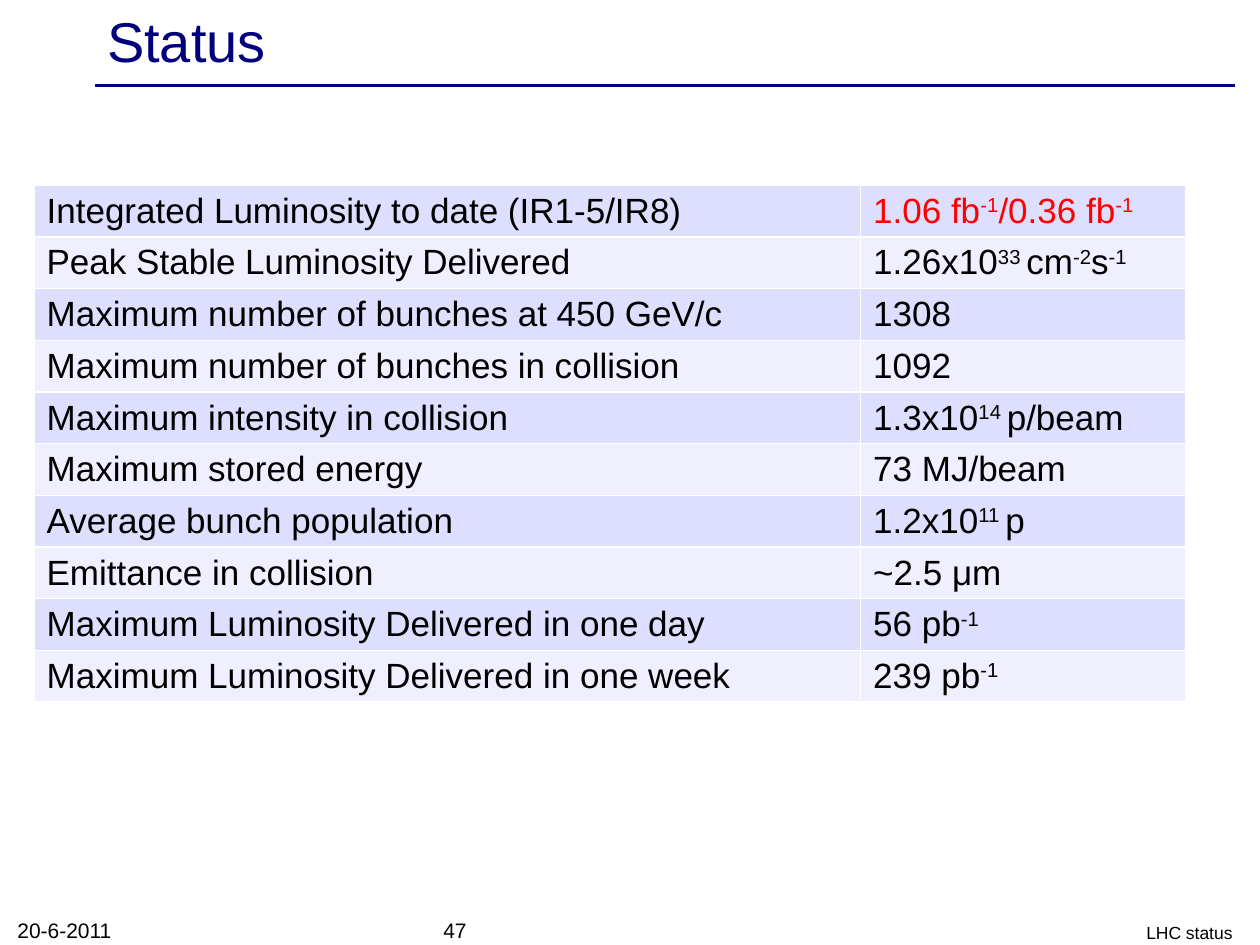
"""Build the accelerator status slide with its table of figures."""
from lxml.etree import SubElement
from pptx import Presentation
from pptx.dml.color import RGBColor
from pptx.enum.shapes import MSO_CONNECTOR
from pptx.enum.text import MSO_ANCHOR, PP_ALIGN
from pptx.oxml.ns import qn
from pptx.util import Inches, Pt

COLORS = {
    "navy": "00007D",
    "black": "000000",
    "red": "FF0000",
    "white": "FFFFFF",
    "band_dark": "DEDEFF",
    "band_light": "EFEFFF",
}
FIGURES = [
    ("Integrated Luminosity to date (IR1-5/IR8)", "1.06 fb^-1^/0.36 fb^-1^"),
    ("Peak Stable Luminosity Delivered", "1.26x10^33 ^cm^-2^s^-1^"),
    ("Maximum number of bunches at 450 GeV/c", "1308"),
    ("Maximum number of bunches in collision", "1092"),
    ("Maximum intensity in collision", "1.3x10^14 ^p/beam"),
    ("Maximum stored energy", "73 MJ/beam"),
    ("Average bunch population", "1.2x10^11 ^p"),
    ("Emittance in collision", "~2.5 μm"),
    ("Maximum Luminosity Delivered in one day", "56 pb^-1^"),
    ("Maximum Luminosity Delivered in one week", "239 pb^-1^"),
]
COLUMN_WIDTHS = (6.56, 2.58)
ROW_HEIGHT = 0.41


def color(name):
    """Return the named colour."""
    return RGBColor.from_string(COLORS[name])


def write_text(frame, text, size=20, ink="black", align=PP_ALIGN.LEFT):
    """Write one paragraph, raising the parts between carets."""
    para = frame.paragraphs[0]
    para.alignment = align
    for index, part in enumerate(text.split("^")):
        if not part:
            continue
        span = para.add_run()
        span.text = part
        span.font.name = "Arial"
        span.font.size = Pt(size)
        span.font.color.rgb = color(ink)
        if index % 2:
            span.font._element.set("baseline", "30000")


def add_title(page, text):
    """Place and fill the title placeholder."""
    title = page.shapes.title
    title.left, title.top = Inches(0.75), Inches(0.03)
    title.width, title.height = Inches(9), Inches(0.57)
    title.text_frame.vertical_anchor = MSO_ANCHOR.MIDDLE
    write_text(title.text_frame, text, size=32, ink="navy")


def add_rule(page):
    """Draw the line under the title."""
    rule = page.shapes.add_connector(
        MSO_CONNECTOR.STRAIGHT, Inches(0.75), Inches(0.68), Inches(9.8), Inches(0.68)
    )
    rule.line.color.rgb = color("navy")
    rule.line.width = Pt(2)
    SubElement(rule._element.spPr, qn("a:effectLst"))


def add_borders(cell):
    """Give a cell thin white borders."""
    properties = cell._tc.get_or_add_tcPr()
    for side in ("lnL", "lnR", "lnT", "lnB"):
        border = SubElement(properties, qn(f"a:{side}"), w=str(Pt(1)))
        fill = SubElement(border, qn("a:solidFill"))
        SubElement(fill, qn("a:srgbClr"), val=COLORS["white"])


def add_figures(page):
    """Add the banded table of figures."""
    table = page.shapes.add_table(
        len(FIGURES), len(COLUMN_WIDTHS), Inches(0.27), Inches(1.47),
        Inches(sum(COLUMN_WIDTHS)), Inches(ROW_HEIGHT * len(FIGURES)),
    ).table
    table.first_row = False
    for column, width in zip(table.columns, COLUMN_WIDTHS):
        column.width = Inches(width)
    for row, texts in enumerate(FIGURES):
        table.rows[row].height = Inches(ROW_HEIGHT)
        for column, text in enumerate(texts):
            cell = table.cell(row, column)
            add_borders(cell)
            cell.fill.solid()
            cell.fill.fore_color.rgb = color("band_light" if row % 2 else "band_dark")
            cell.vertical_anchor = MSO_ANCHOR.MIDDLE
            ink = "red" if (row, column) == (0, 1) else "black"
            write_text(cell.text_frame, text, ink=ink)


def add_footer(page, text, left, top, width, height, **text_format):
    """Add one footer text box."""
    box = page.shapes.add_textbox(Inches(left), Inches(top), Inches(width), Inches(height))
    box.text_frame.word_wrap = True
    box.text_frame.vertical_anchor = MSO_ANCHOR.BOTTOM
    write_text(box.text_frame, text, **text_format)


def main():
    """Build and save the deck."""
    deck = Presentation()
    deck.slide_width, deck.slide_height = Inches(10), Inches(7.5)
    page = deck.slides.add_slide(deck.slide_layouts[5])
    add_rule(page)
    add_figures(page)
    add_title(page, "Status")
    add_footer(page, "20-6-2011", 0.04, 7.24, 2.33, 0.29, size=12)
    add_footer(page, "47", 3.42, 7.25, 3.17, 0.28, size=12)
    add_footer(page, "LHC status", 7.55, 7.25, 2.33, 0.28, size=10, align=PP_ALIGN.RIGHT)
    deck.save("out.pptx")


if __name__ == "__main__":
    main()
